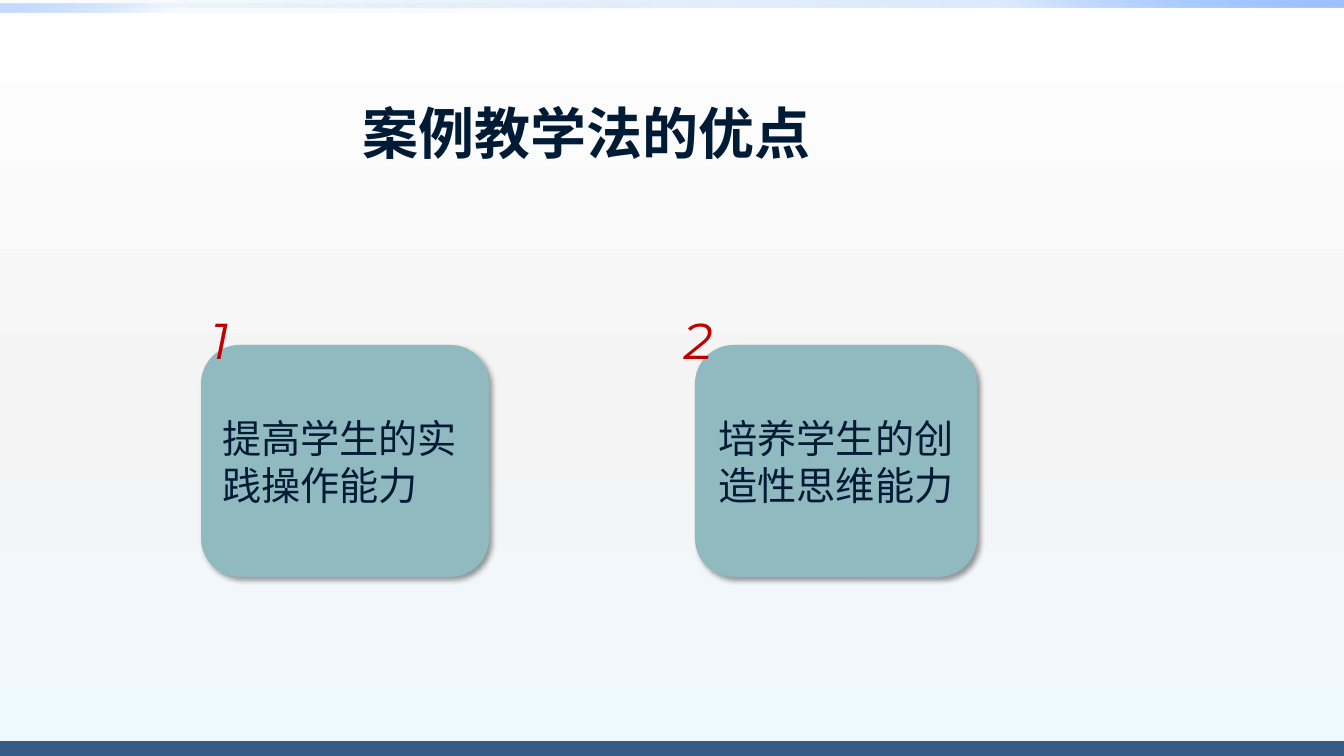
from lxml import etree
from pptx import Presentation
from pptx.dml.color import RGBColor
from pptx.enum.shapes import MSO_SHAPE
from pptx.enum.text import MSO_ANCHOR, PP_ALIGN
from pptx.oxml.ns import qn
from pptx.util import Pt

RECT, ROUNDED = MSO_SHAPE.RECTANGLE, MSO_SHAPE.ROUNDED_RECTANGLE
LEFT, CENTER = PP_ALIGN.LEFT, PP_ALIGN.CENTER
TOP, MIDDLE = MSO_ANCHOR.TOP, MSO_ANCHOR.MIDDLE

TITLE = "案例教学法的优点"
ADVANTAGES = [
    {"number": "1", "text": "提高学生的实践操作能力", "align": LEFT,
     "card": (201, 345, 288, 232), "badge": (201, 304, 81, 109)},
    {"number": "2", "text": "培养学生的创造性思维能力", "align": CENTER,
     "card": (695, 345, 282, 232), "badge": (674, 304, 53, 72)},
]
BACKDROP = [(0, "FFFFFF", 100), (55, "F4F4F4", 100), (100, "EEF9FF", 100)]
STRIPS = [
    ((0, 0, 1344, 8), 315, [(0, "0058B7", 0), (75, "4F95FF", 20), (100, "9EC2FF", 100)]),
    ((0, 4, 672, 8), 135, [(0, "0058B7", 0), (75, "4F95FF", 5), (100, "9EC2FF", 60)]),
]
NAVY, RED, TEAL = "001B36", "C00000", "91B9C0"
BAR_FILL, BAR_LINE = "355B85", "355A83"
CJK_FONT = "Noto Sans CJK SC"
EMU_PER_PX = 914400 / 100.8


def px(*lengths):
    return [round(length * EMU_PER_PX) for length in lengths]


def color(value):
    return RGBColor.from_string(value)


def add_color(parent, value, opacity):
    entry = etree.SubElement(parent, qn("a:srgbClr"), val=value)
    if opacity < 100:
        etree.SubElement(entry, qn("a:alpha"), val=str(opacity * 1000))


def set_gradient(fill, properties, stops, angle):
    fill.gradient()
    gradient = properties.find(qn("a:gradFill"))
    for child in list(gradient):
        gradient.remove(child)
    stop_list = etree.SubElement(gradient, qn("a:gsLst"))
    for position, value, opacity in stops:
        stop = etree.SubElement(stop_list, qn("a:gs"), pos=str(position * 1000))
        add_color(stop, value, opacity)
    etree.SubElement(gradient, qn("a:lin"), ang=str(angle * 60000), scaled="0")


def add_block(shapes, kind, box, fill=None):
    block = shapes.add_shape(kind, *px(*box))
    block.shadow.inherit = False
    block.line.fill.background()
    if fill:
        block.fill.solid()
        block.fill.fore_color.rgb = color(fill)
    return block


def add_shadow(block):
    effects = block._element.spPr.find(qn("a:effectLst"))
    shadow = etree.SubElement(effects, qn("a:outerShdw"), blurRad=str(Pt(4)),
                              dist=str(Pt(3)), dir=str(45 * 60000),
                              algn="tl", rotWithShape="0")
    add_color(shadow, "000000", 40)


def write(shape, text, font, size, ink=NAVY, align=LEFT, anchor=MIDDLE,
          bold=False, italic=False):
    frame = shape.text_frame
    frame.word_wrap = True
    frame.vertical_anchor = anchor
    paragraph = frame.paragraphs[0]
    paragraph.alignment = align
    run = paragraph.add_run()
    run.text = text
    run.font.name = font
    run.font.size = Pt(size)
    run.font.bold = bold
    run.font.italic = italic
    run.font.color.rgb = color(ink)
    latin = run.font._element.find(qn("a:latin"))
    east_asian = etree.Element(qn("a:ea"), typeface=CJK_FONT)
    latin.addnext(east_asian)


def main():
    deck = Presentation()
    deck.slide_width, deck.slide_height = px(1344, 756)
    slide = deck.slides.add_slide(deck.slide_layouts[5])
    backdrop = slide.background.fill
    set_gradient(backdrop, slide._element.cSld.bg.bgPr, BACKDROP, 90)

    title = slide.shapes.title
    title.left, title.top, title.width, title.height = px(56, 57, 1061, 150)
    write(title, TITLE, "Roboto", 40, align=CENTER, bold=True)

    for box, angle, stops in STRIPS:
        strip = add_block(slide.shapes, RECT, box)
        set_gradient(strip.fill, strip._element.spPr, stops, angle)

    bar = add_block(slide.shapes, RECT, (0, 742, 1344, 28), BAR_FILL)
    bar.line.color.rgb = color(BAR_LINE)
    bar.line.width = Pt(2)

    for advantage in ADVANTAGES:
        group = slide.shapes.add_group_shape()
        card = add_block(group.shapes, ROUNDED, advantage["card"], TEAL)
        add_shadow(card)
        write(card, advantage["text"], CJK_FONT, 28, align=advantage["align"])
        badge = group.shapes.add_textbox(*px(*advantage["badge"]))
        write(badge, advantage["number"], "Montserrat", 36, ink=RED,
              anchor=TOP, italic=True)

    deck.save("out.pptx")


if __name__ == "__main__":
    main()
